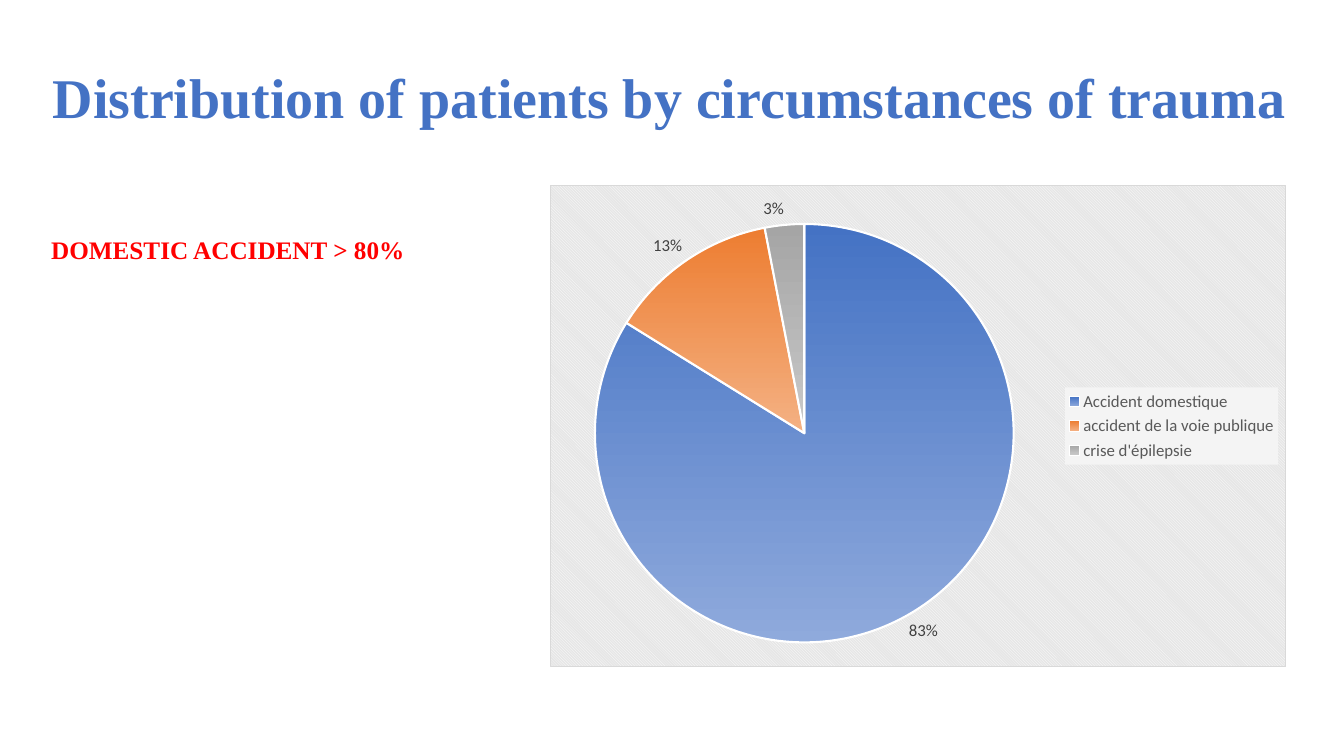
from dataclasses import dataclass
from typing import Any

from lxml.etree import SubElement
from pptx import Presentation
from pptx.chart.chart import Chart
from pptx.chart.data import CategoryChartData
from pptx.dml.color import RGBColor
from pptx.enum.chart import XL_CHART_TYPE, XL_LABEL_POSITION, XL_LEGEND_POSITION
from pptx.enum.text import MSO_ANCHOR, MSO_AUTO_SIZE, PP_ALIGN
from pptx.oxml import parse_xml
from pptx.oxml.ns import nsdecls, qn
from pptx.util import Cm, Pt


@dataclass(frozen=True)
class Circumstance:
    name: str
    percent: int
    top_color: str
    bottom_color: str


@dataclass(frozen=True)
class Heading:
    text: str
    box: tuple[float, float, float, float]
    size: int
    color: str
    paragraph_format: dict[str, Any]


CIRCUMSTANCES = [
    Circumstance("Accident domestique", 83, "4472C4", "8FAADC"),
    Circumstance("accident de la voie publique", 13, "ED7D31", "F4B183"),
    Circumstance("crise d'épilepsie", 3, "A5A5A5", "C9C9C9"),
]
TITLE = Heading(
    "Distribution of patients by circumstances of trauma",
    (1.04, 0.61, 31.65, 2.51), 40, "4472C4",
    {"alignment": PP_ALIGN.CENTER, "line_spacing": 1.5,
     "space_before": Pt(6), "space_after": Pt(6)},
)
FINDING = Heading(
    "DOMESTIC ACCIDENT > 80%", (1.04, 5.79, 10.9, 1.02), 18, "FF0000",
    {"alignment": PP_ALIGN.LEFT},
)
CHART_BOX = (13.87, 4.65, 18.54, 12.17)
# Fractions of the chart: left, top, width, height
PLOT_AREA = (0.06, 0.08, 0.57, 0.87)
LEGEND_AREA = (0.7, 0.42, 0.29, 0.16)


def rgb(color: str) -> RGBColor:
    return RGBColor.from_string(color)


def set_attributes(target: Any, values: dict[str, Any]) -> None:
    for name, value in values.items():
        setattr(target, name, value)


def set_font(font: Any, size: int, color: str, name: str, bold: bool = False) -> None:
    set_attributes(font, {"size": Pt(size), "name": name, "bold": bold})
    font.color.rgb = rgb(color)


def write_heading(shape: Any, heading: Heading) -> None:
    positions = map(Cm, heading.box)
    set_attributes(shape, dict(zip(("left", "top", "width", "height"), positions)))
    frame = shape.text_frame
    set_attributes(frame, {
        "word_wrap": True,
        "auto_size": MSO_AUTO_SIZE.SHAPE_TO_FIT_TEXT,
        "vertical_anchor": MSO_ANCHOR.TOP,
    })
    paragraph = frame.paragraphs[0]
    set_attributes(paragraph, heading.paragraph_format)
    run = paragraph.add_run()
    run.text = heading.text
    set_font(run.font, heading.size, heading.color, "Times New Roman", True)


def set_layout(element: Any, area: tuple[float, ...], inner: bool = False) -> None:
    layout = element.find(qn("c:layout"))
    if layout is None:
        layout = parse_xml(f"<c:layout {nsdecls('c')}/>")
        if inner:
            element.insert(0, layout)
        else:
            element.find(qn("c:legendPos")).addnext(layout)
    manual = SubElement(layout, qn("c:manualLayout"))
    settings = [("layoutTarget", "inner")] if inner else []
    settings += [("xMode", "edge"), ("yMode", "edge")]
    settings += zip("xywh", map(str, area))
    for tag, value in settings:
        SubElement(manual, qn(f"c:{tag}")).set("val", value)


def fill_chart_background(chart: Chart) -> None:
    chart.element.find(qn("c:chart")).addnext(parse_xml(
        f"<c:spPr {nsdecls('c', 'a')}>"
        '<a:pattFill prst="dkDnDiag">'
        '<a:fgClr><a:srgbClr val="FFFFFF"/></a:fgClr>'
        '<a:bgClr><a:srgbClr val="E6E6E6"/></a:bgClr></a:pattFill>'
        '<a:ln w="9525"><a:solidFill><a:srgbClr val="D9D9D9"/></a:solidFill></a:ln>'
        "</c:spPr>"
    ))


def format_legend(chart: Chart) -> None:
    chart.has_legend = True
    legend = chart.legend
    set_attributes(legend, {"position": XL_LEGEND_POSITION.RIGHT,
                            "include_in_layout": False})
    set_font(legend.font, 12, "595959", "Calibri")
    legend_element = chart.element.find(f".//{qn('c:legend')}")
    set_layout(legend_element, LEGEND_AREA)
    legend_element.find(qn("c:txPr")).addprevious(parse_xml(
        f"<c:spPr {nsdecls('c', 'a')}><a:solidFill>"
        '<a:srgbClr val="F4F4F4"/></a:solidFill></c:spPr>'
    ))


def add_circumstances_chart(slide: Any) -> None:
    chart_data = CategoryChartData()
    chart_data.categories = [item.name for item in CIRCUMSTANCES]
    chart_data.add_series("Series 1", [item.percent for item in CIRCUMSTANCES])
    chart = slide.shapes.add_chart(
        XL_CHART_TYPE.PIE, *map(Cm, CHART_BOX), chart_data
    ).chart
    chart.has_title = False
    set_font(chart.font, 10, "000000", "Calibri")
    fill_chart_background(chart)
    format_legend(chart)
    set_layout(chart.element.find(f".//{qn('c:plotArea')}"), PLOT_AREA, True)

    # Slices
    plot = chart.plots[0]
    plot.vary_by_categories = True
    for index, item in enumerate(CIRCUMSTANCES):
        slice_format = plot.series[0].points[index].format
        slice_format.fill.gradient()
        slice_format.fill.gradient_angle = 270
        colors = (item.top_color, item.bottom_color)
        for stop, color in zip(slice_format.fill.gradient_stops, colors):
            stop.color.rgb = rgb(color)
        slice_format.line.width = Pt(1.5)
        slice_format.line.color.rgb = rgb("FFFFFF")

    # Labels
    labels = plot.series[0].data_labels
    set_attributes(labels, {
        "show_value": True,
        "number_format": '0"%"',
        "number_format_is_linked": False,
        "position": XL_LABEL_POSITION.OUTSIDE_END,
    })
    set_font(labels.font, 12, "404040", "Calibri")


def main() -> None:
    presentation = Presentation()
    set_attributes(presentation, {"slide_width": Cm(33.87), "slide_height": Cm(19.05)})
    slide = presentation.slides.add_slide(presentation.slide_layouts[5])
    add_circumstances_chart(slide)
    write_heading(slide.shapes.title, TITLE)
    write_heading(slide.shapes.add_textbox(0, 0, 0, 0), FINDING)
    presentation.save("out.pptx")


if __name__ == "__main__":
    main()
